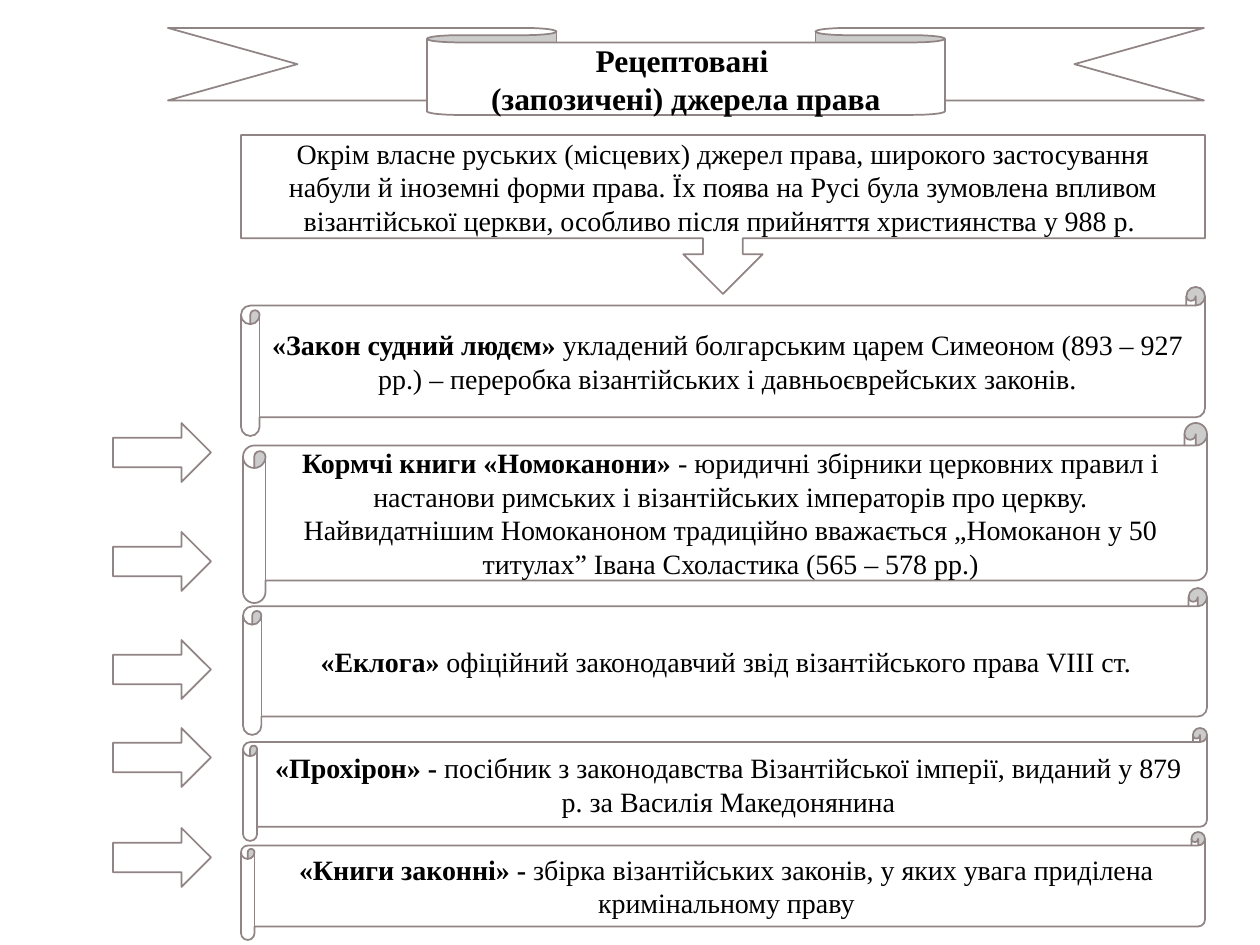
from pptx import Presentation
from pptx.dml.color import RGBColor
from pptx.enum.shapes import MSO_SHAPE as SHAPE
from pptx.enum.text import MSO_ANCHOR as ANCHOR, PP_ALIGN as ALIGN
from pptx.util import Emu, Pt

PX_PER_INCH = 126
FONT = "Times New Roman"
WHITE, BLACK, OUTLINE = "FFFFFF", "000000", "918485"

INTRO = ("Окрім власне руських (місцевих) джерел права, широкого застосування "
         "набули й іноземні форми права. Їх поява на Русі була зумовлена впливом "
         "візантійської церкви, особливо після прийняття християнства у 988 р. ")

# Each source of law: left, top, height, bold name, description
SOURCES = [
    (241, 287, 149, "«Закон судний людєм»",
     " укладений болгарським царем Симеоном (893 – 927 рр.) – переробка "
     "візантійських і давньоєврейських законів."),
    (243, 423, 180, "Кормчі книги «Номоканони» ",
     "- юридичні збірники церковних правил і настанови римських і візантійських "
     "імператорів про церкву. Найвидатнішим Номоканоном традиційно вважається "
     "„Номоканон у 50 титулах” Івана Схоластика (565 – 578 рр.)"),
    (243, 588, 147, "«Еклога»",
     " офіційний законодавчий звід візантійського права VIII ст. "),
    (243, 728, 113, "«Прохірон» - ",
     "посібник з законодавства Візантійської імперії, виданий у 879 р. "
     "за Василія Македонянина"),
    (241, 832, 108, "«Книги законні» - ",
     "збірка візантійських законів, у яких увага приділена кримінальному праву"),
]
ARROW_TOPS = [423, 532, 640, 728, 828]


def px(n):
    return Emu(round(n * 914400 / PX_PER_INCH))


def color(hex_code):
    return RGBColor.from_string(hex_code)


def add_outlined(s, kind, x, y, w, h):
    sp = s.shapes.add_shape(kind, px(x), px(y), px(w), px(h))
    sp.shadow.inherit = False
    sp.fill.solid()
    sp.fill.fore_color.rgb = color(WHITE)
    sp.line.color.rgb = color(OUTLINE)
    sp.line.width = Pt(1)
    return sp


def add_run(p, text, size=16, bold=False):
    r = p.add_run()
    r.text = text
    r.font.name = FONT
    r.font.size = Pt(size)
    r.font.bold = bold
    r.font.color.rgb = color(BLACK)


def write(sp, paragraphs, size=16):
    """Fill a shape with centred paragraphs, each a list of (text, bold) runs."""
    tf = sp.text_frame
    tf.word_wrap = True
    tf.vertical_anchor = ANCHOR.MIDDLE
    for i, runs in enumerate(paragraphs):
        p = tf.add_paragraph() if i else tf.paragraphs[0]
        p.alignment = ALIGN.CENTER
        for text, bold in runs:
            add_run(p, text, size=size, bold=bold)


def main():
    prs = Presentation()
    prs.slide_width, prs.slide_height = px(1260), px(945)
    s = prs.slides.add_slide(prs.slide_layouts[6])

    # Introduction
    intro = add_outlined(s, SHAPE.DOWN_ARROW_CALLOUT, 241, 135, 964, 159)
    write(intro, [[(INTRO, False)]])

    # Heading ribbon
    ribbon = add_outlined(s, SHAPE.DOWN_RIBBON, 168, 28, 1036, 87)
    write(ribbon, [[("Рецептовані ", True)],
                   [("(запозичені) джерела права", True)]], size=18)

    # Arrows pointing at the scrolls
    for top in ARROW_TOPS:
        add_outlined(s, SHAPE.RIGHT_ARROW, 113, top, 98, 59)

    # Scrolls with the sources of law
    for left, top, height, name, description in SOURCES:
        scroll = add_outlined(s, SHAPE.HORIZONTAL_SCROLL, left, top, 964, height)
        write(scroll, [[(name, True), (description, False)]])

    prs.save("out.pptx")


if __name__ == "__main__":
    main()
